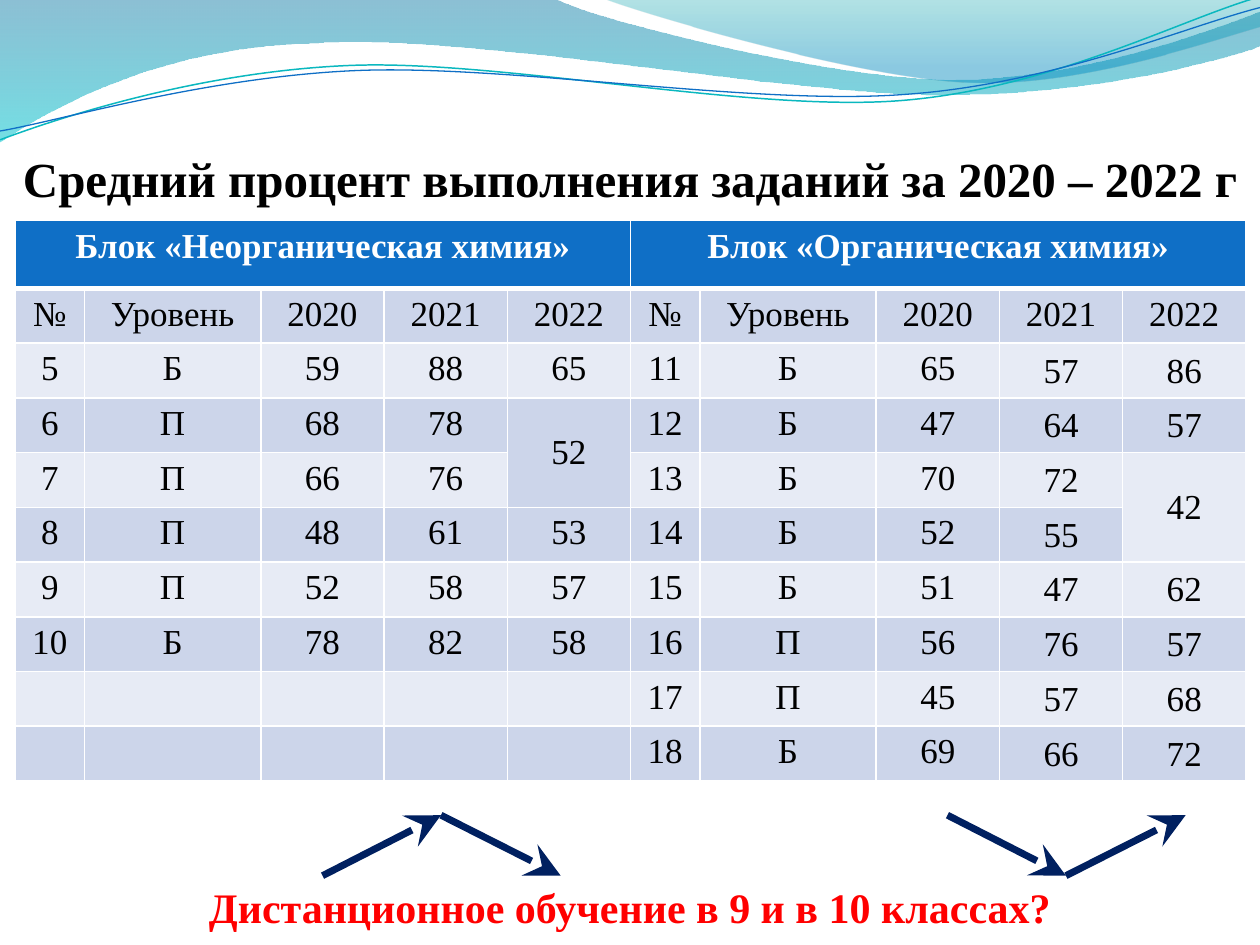
from dataclasses import dataclass
from math import cos, radians, sin

from lxml import etree
from pptx import Presentation
from pptx.dml.color import RGBColor
from pptx.enum.shapes import MSO_CONNECTOR
from pptx.enum.text import MSO_ANCHOR, PP_ALIGN
from pptx.oxml.ns import qn
from pptx.util import Inches, Pt

STRAIGHT = MSO_CONNECTOR.STRAIGHT
CENTER = PP_ALIGN.CENTER
TOP, MIDDLE = MSO_ANCHOR.TOP, MSO_ANCHOR.MIDDLE
FONT = "Times New Roman"
BLUE, DARK_BAND, LIGHT_BAND = "0F6FC6", "CCD5EA", "E7EBF5"
BLACK, WHITE, RED, NAVY = "000000", "FFFFFF", "FF0000", "002060"
TILT = 2.7
TILT_CENTER = (4.99, 0.58)

Point = tuple[float, float]


@dataclass
class GradientStop:
    position: float
    color: str
    opacity: int


@dataclass
class Wave:
    """A start point, then Bezier curves (three points) or lines (one point)."""
    start: Point
    segments: list[tuple[Point, ...]]
    stops: tuple[GradientStop, ...] = ()
    line_color: str = ""
    line_width: float = 0


@dataclass
class Arrow:
    start: Point
    end: Point


WAVES = [
    Wave((0, 0), [
        ((4.4, -0.01),),
        ((4.76, 0.17), (6.64, 0.63), (7.58, 0.63)),
        ((8.53, 0.63), (9.58, 0.26), (10, 0.09)),
        ((10.01, 0.36),),
        ((9.83, 0.44), (8.7, 0.76), (7.46, 0.75)),
        ((6.22, 0.75), (3.82, 0.28), (2.57, 0.34)),
        ((1.29, 0.36), (0.46, 0.83), (-0.01, 1.13)),
    ], (GradientStop(0, "0074A1", 45), GradientStop(1, "00C6CF", 55))),
    Wave((4.79, -0.01), [
        ((5.09, 0.11), (6.82, 0.62), (7.69, 0.65)),
        ((8.56, 0.69), (9.61, 0.32), (10, 0.21)),
        ((10, 0),),
    ], (GradientStop(0, "00A1A9", 30), GradientStop(0.8, "008BBF", 45))),
    Wave((0, 1.11), [
        ((0.48, 0.93), (1.58, 0.57), (2.77, 0.52)),
        ((3.95, 0.47), (5.93, 0.89), (7.13, 0.8)),
        ((8.33, 0.71), (9.38, 0.15), (9.98, -0.02)),
    ], line_color="0AB8BF", line_width=0.85),
    Wave((0, 1.04), [
        ((0.47, 0.96), (1.64, 0.61), (2.83, 0.56)),
        ((4.03, 0.51), (5.97, 0.84), (7.17, 0.75)),
        ((8.36, 0.67), (9.41, 0.21), (10, 0.06)),
    ], line_color=BLUE, line_width=0.75),
]

BLOCKS = ["Блок «Неорганическая химия»", "Блок «Органическая химия»"]
HEADINGS = ["№", "Уровень", "2020", "2021", "2022"]
INORGANIC = [
    ["5", "Б", "59", "88", "65"],
    ["6", "П", "68", "78", "52"],
    ["7", "П", "66", "76", ""],
    ["8", "П", "48", "61", "53"],
    ["9", "П", "52", "58", "57"],
    ["10", "Б", "78", "82", "58"],
    [""] * 5,
    [""] * 5,
]
ORGANIC = [
    ["11", "Б", "65", "57", "86"],
    ["12", "Б", "47", "64", "57"],
    ["13", "Б", "70", "72", "42"],
    ["14", "Б", "52", "55", ""],
    ["15", "Б", "51", "47", "62"],
    ["16", "П", "56", "76", "57"],
    ["17", "П", "45", "57", "68"],
    ["18", "Б", "69", "66", "72"],
]
ARROW_TOP, ARROW_BOTTOM = 6.47, 6.95
ARROWS = [
    Arrow((2.56, ARROW_BOTTOM), (3.5, ARROW_TOP)),
    Arrow((3.5, ARROW_TOP), (4.45, ARROW_BOTTOM)),
    Arrow((7.52, ARROW_TOP), (8.46, ARROW_BOTTOM)),
    Arrow((8.46, ARROW_BOTTOM), (9.41, ARROW_TOP)),
]


def rgb(color: str) -> RGBColor:
    return RGBColor.from_string(color)


def wave_vertex(point: Point, tilted: bool) -> tuple[int, int]:
    """Slide position in EMU, before the shape's own rotation."""
    angle = radians(TILT if tilted else 0)
    dx, dy = point[0] - TILT_CENTER[0], point[1] - TILT_CENTER[1]
    return (Inches(TILT_CENTER[0] + dx * cos(angle) - dy * sin(angle)),
            Inches(TILT_CENTER[1] + dx * sin(angle) + dy * cos(angle)))


def add_wave(slide, wave: Wave) -> None:
    tilted = not wave.stops
    segments = [[wave_vertex(point, tilted) for point in segment] for segment in wave.segments]
    builder = slide.shapes.build_freeform(*wave_vertex(wave.start, tilted))
    builder.add_line_segments([segment[-1] for segment in segments], close=not tilted)
    shape = builder.convert_to_shape()
    shape.shadow.inherit = False

    # Turn the straight segments with control points into curves
    for line, segment in zip(list(shape._element.iter(qn("a:lnTo"))), segments):
        if len(segment) == 3:
            curve = etree.Element(qn("a:cubicBezTo"))
            for x, y in segment:
                etree.SubElement(curve, qn("a:pt"), x=str(x - shape.left), y=str(y - shape.top))
            line.getparent().replace(line, curve)

    if tilted:
        shape.rotation = 360 - TILT
        shape.fill.background()
        shape.line.color.rgb = rgb(wave.line_color)
        shape.line.width = Pt(wave.line_width)
        return
    shape.line.fill.background()
    shape.fill.gradient()
    shape.fill.gradient_angle = 270
    for stop, wanted in zip(shape.fill.gradient_stops, wave.stops):
        stop.position = wanted.position
        stop.color.rgb = rgb(wanted.color)
    for color, wanted in zip(shape._element.spPr.iter(qn("a:srgbClr")), wave.stops):
        etree.SubElement(color, qn("a:alpha"), val=str(wanted.opacity * 1000))


def write_text(frame, text: str, size: float, color: str, bold: bool):
    paragraph = frame.paragraphs[0]
    paragraph.alignment = CENTER
    run = paragraph.add_run()
    run.text = text
    run.font.name = FONT
    run.font.size = Pt(size)
    run.font.bold = bold
    run.font.color.rgb = rgb(color)
    return paragraph


def add_caption(slide, text: str, top: float, height: float, size: float, color: str) -> None:
    box = slide.shapes.add_textbox(0, Inches(top), Inches(10), Inches(height))
    box.text_frame.word_wrap = True
    write_text(box.text_frame, text, size, color, True)


def set_borders(cell, bottom: float = 1) -> None:
    properties = cell._tc.get_or_add_tcPr()
    for index, (side, width) in enumerate(zip("LRTB", (1, 1, 1, bottom))):
        line = etree.Element(qn(f"a:ln{side}"), w=str(Pt(width)))
        fill = etree.SubElement(line, qn("a:solidFill"))
        etree.SubElement(fill, qn("a:srgbClr"), val=WHITE)
        properties.insert(index, line)


def fill_cell(cell, text: str, fill: str, tight: bool = False,
              color: str = BLACK, bold: bool = False) -> None:
    cell.fill.solid()
    cell.fill.fore_color.rgb = rgb(fill)
    if not text:
        return
    paragraph = write_text(cell.text_frame, text, 20, color, bold)
    if tight:
        cell.vertical_anchor = MIDDLE
        cell.margin_left = cell.margin_right = cell.margin_top = Inches(0.01)
        cell.margin_bottom = 0
    else:
        cell.vertical_anchor = MIDDLE if cell.is_merge_origin and not bold else TOP
        paragraph.space_before = paragraph.space_after = Pt(6)


def add_results_table(slide) -> None:
    rows = [HEADINGS * 2] + [left + right for left, right in zip(INORGANIC, ORGANIC)]
    width, height, header_height = 9.77, 4.45, 0.54
    table = slide.shapes.add_table(len(rows) + 1, 10, Inches(0.12), Inches(1.75),
                                   Inches(width), Inches(height)).table
    year_width = (width / 2 - 0.55 - 1.4) / 3
    for column, column_width in zip(table.columns, [0.55, 1.4, *[year_width] * 3] * 2):
        column.width = Inches(column_width)
    for index, row in enumerate(table.rows):
        row.height = Inches((height - header_height) / len(rows) if index else header_height)
        for cell in row.cells:
            set_borders(cell, bottom=1 if index else 3)

    # Merged headings and two-row results
    for first, last in (((0, 0), (0, 4)), ((0, 5), (0, 9)), ((3, 4), (4, 4)), ((4, 9), (5, 9))):
        table.cell(*first).merge(table.cell(*last))
    for index, title in enumerate(BLOCKS):
        fill_cell(table.cell(0, index * 5), title, BLUE, color=WHITE, bold=True)
    for row_index, values in enumerate(rows, 1):
        band = DARK_BAND if row_index % 2 else LIGHT_BAND
        for column_index, value in enumerate(values):
            tight = row_index > 1 and column_index >= 8
            fill_cell(table.cell(row_index, column_index), value, band, tight)


def add_arrow(slide, arrow: Arrow) -> None:
    connector = slide.shapes.add_connector(
        STRAIGHT, *(Inches(value) for value in arrow.start + arrow.end))
    connector.line.color.rgb = rgb(NAVY)
    connector.line.width = Pt(4)
    etree.SubElement(connector.line._get_or_add_ln(), qn("a:tailEnd"),
                     type="stealth", w="lg", len="lg")
    etree.SubElement(connector._element.spPr, qn("a:effectLst"))


def main() -> None:
    presentation = Presentation()
    presentation.slide_width, presentation.slide_height = Inches(10), Inches(7.5)
    slide = presentation.slides.add_slide(presentation.slide_layouts[6])

    # Wavy header
    for wave in WAVES:
        add_wave(slide, wave)

    # Results, title, trend arrows and closing question
    add_results_table(slide)
    add_caption(slide, "Средний процент выполнения заданий за 2020 – 2022 г", 1.13, 0.57, 28, BLACK)
    for arrow in ARROWS:
        add_arrow(slide, arrow)
    add_caption(slide, "Дистанционное обучение в 9 и в 10 классах?", 6.95, 0.5, 24, RED)
    presentation.save("out.pptx")


if __name__ == "__main__":
    main()
